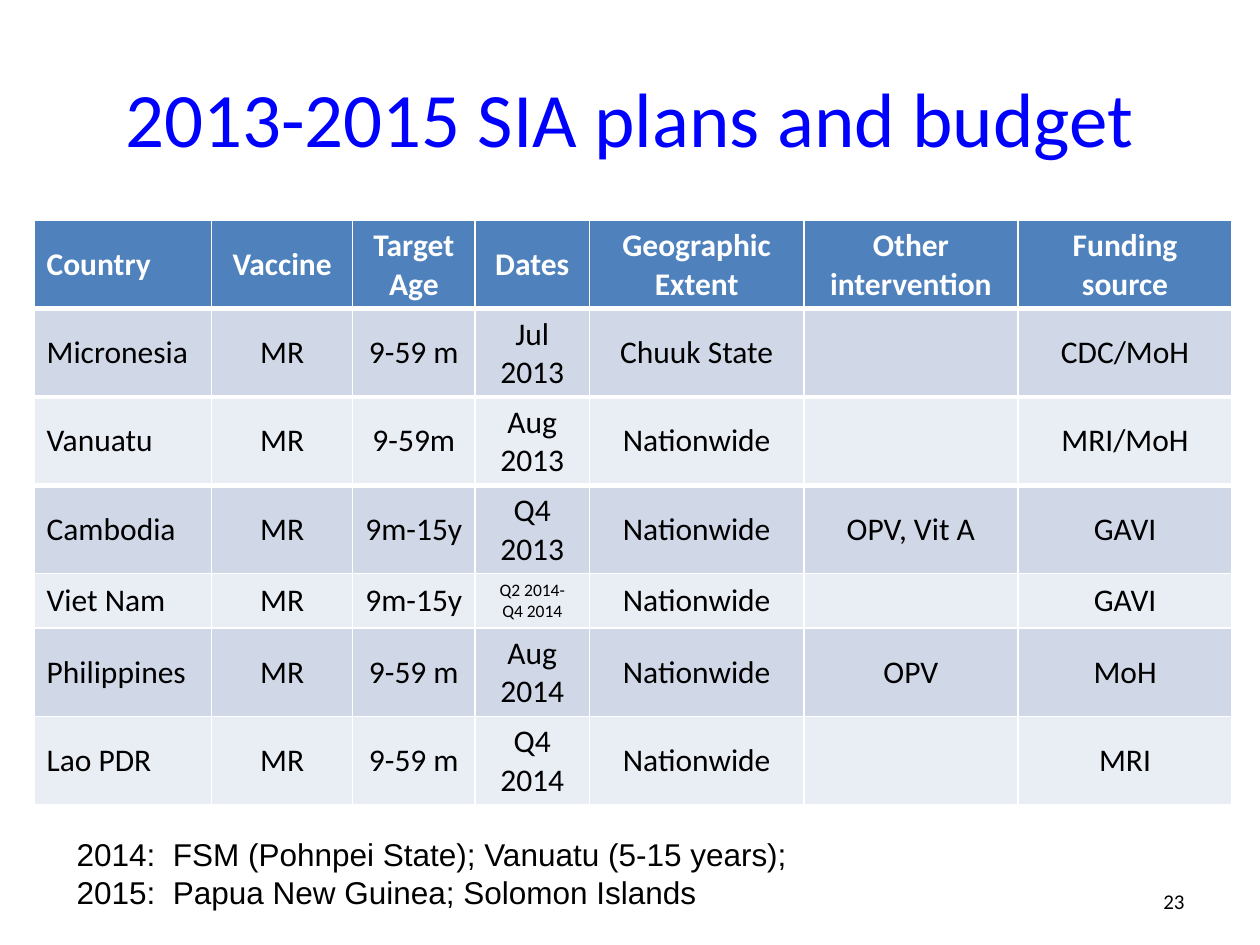
from dataclasses import dataclass
from typing import Any

from lxml.etree import SubElement
from pptx import Presentation
from pptx.dml.color import RGBColor
from pptx.enum.text import MSO_ANCHOR as Anchor, PP_ALIGN as Align
from pptx.oxml.ns import qn
from pptx.util import Inches, Pt

BLACK, WHITE = "000000", "FFFFFF"
COLUMN_WIDTHS = [1.41, 1.12, 0.97, 0.91, 1.7, 1.7, 1.7]
TALL_ROW, SHORT_ROW = 0.7, 0.43
PLANS = [
    ["Country", "Vaccine", "Target Age", "Dates", "Geographic Extent", "Other intervention", "Funding source"],
    ["Micronesia", "MR", "9-59 m", "Jul 2013", "Chuuk State", "", "CDC/MoH"],
    ["Vanuatu", "MR", "9-59m", "Aug 2013", "Nationwide", "", "MRI/MoH"],
    ["Cambodia", "MR", "9m-15y", "Q4 2013", "Nationwide", "OPV, Vit A", "GAVI"],
    ["Viet Nam", "MR", "9m-15y", "Q2 2014-\nQ4 2014", "Nationwide", "", "GAVI"],
    ["Philippines", "MR", "9-59 m", "Aug 2014", "Nationwide", "OPV", "MoH"],
    ["Lao PDR", "MR", "9-59 m", "Q4 2014", "Nationwide", "", "MRI"],
]
THICK_RULES = 3


def color(value):
    """Turn a hex string into a colour."""
    return RGBColor.from_string(value)


@dataclass
class PlanSlide:
    """Hold the style and the current slide."""

    page: Any
    font: str = "Calibri"
    title_color: str = "0000FF"
    header_fill: str = "4F81BD"
    band_fills: tuple = ("E9EDF4", "D0D8E8")

    def set_text(self, frame, text, size, ink=BLACK, align=Align.LEFT, bold=False, font=None):
        """Set the text of a frame and format every run."""
        frame.text = text
        for para in frame.paragraphs:
            para.alignment = align
            for span in para.runs:
                span.font.name = font or self.font
                span.font.size = Pt(size)
                span.font.bold = bold
                span.font.color.rgb = color(ink)

    def title(self, text, left, top, width, height):
        """Place and fill the title placeholder."""
        box = self.page.shapes.title
        box.left, box.top, box.width, box.height = map(Inches, (left, top, width, height))
        box.text_frame.vertical_anchor = Anchor.MIDDLE
        self.set_text(box.text_frame, text, 44, self.title_color, Align.CENTER)

    def text(self, text, left, top, width, height, size, align=Align.LEFT, anchor=Anchor.TOP, font=None):
        """Add a wrapping text box."""
        box = self.page.shapes.add_textbox(*map(Inches, (left, top, width, height)))
        box.text_frame.word_wrap = True
        box.text_frame.vertical_anchor = anchor
        self.set_text(box.text_frame, text, size, align=align, font=font)

    def border(self, cell, top, bottom):
        """Draw white borders around a cell."""
        properties = cell._tc.get_or_add_tcPr()
        for side, points in (("L", 1), ("R", 1), ("T", top), ("B", bottom)):
            line = SubElement(properties, qn(f"a:ln{side}"), w=str(Pt(points)))
            fill = SubElement(line, qn("a:solidFill"))
            SubElement(fill, qn("a:srgbClr"), val=WHITE)

    def cell(self, cell, text, row, column):
        """Format one cell by its place in the table."""
        header = row == 0
        self.border(cell, 3 if 0 < row <= THICK_RULES else 1, 3 if row < THICK_RULES else 1)
        cell.fill.solid()
        cell.fill.fore_color.rgb = color(self.header_fill if header else self.band_fills[row % 2])
        cell.vertical_anchor = Anchor.MIDDLE
        self.set_text(
            cell.text_frame,
            text,
            10 if "\n" in text else 18,
            WHITE if header else BLACK,
            Align.CENTER if column else Align.LEFT,
            header,
        )

    def table(self, rows, widths, left, top):
        """Add the table of plans."""
        heights = [SHORT_ROW if any("\n" in text for text in row) else TALL_ROW for row in rows]
        size = (left, top, sum(widths), sum(heights))
        table = self.page.shapes.add_table(len(rows), len(widths), *map(Inches, size)).table
        for column, width in zip(table.columns, widths):
            column.width = Inches(width)
        for row, height in zip(table.rows, heights):
            row.height = Inches(height)
        for r, row in enumerate(rows):
            for c, text in enumerate(row):
                self.cell(table.cell(r, c), text, r, c)


def main():
    """Build and save the slide."""
    deck = Presentation()
    deck.slide_width, deck.slide_height = Inches(10), Inches(7.5)
    slide = PlanSlide(deck.slides.add_slide(deck.slide_layouts[5]))
    slide.title("2013-2015 SIA plans and budget", 0.5, 0.3, 9, 1.25)
    slide.text("23", 7.17, 6.95, 2.33, 0.4, 12, Align.RIGHT, Anchor.MIDDLE)
    slide.table(PLANS, COLUMN_WIDTHS, 0.27, 1.75)
    slide.text(
        "2014:  FSM (Pohnpei State); Vanuatu (5-15 years);\n2015:  Papua New Guinea; Solomon Islands",
        0.51, 6.58, 8.35, 0.71, 18, font="Arial",
    )
    deck.save("out.pptx")


if __name__ == "__main__":
    main()
